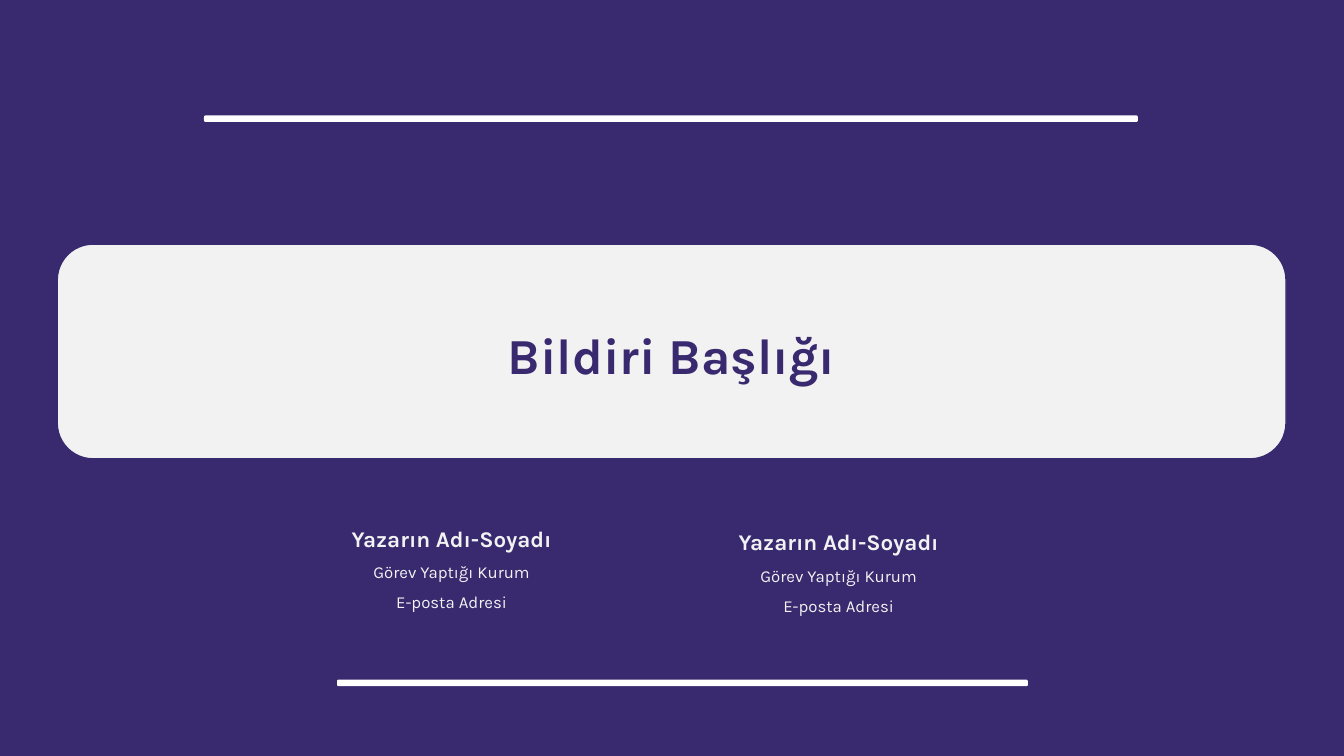
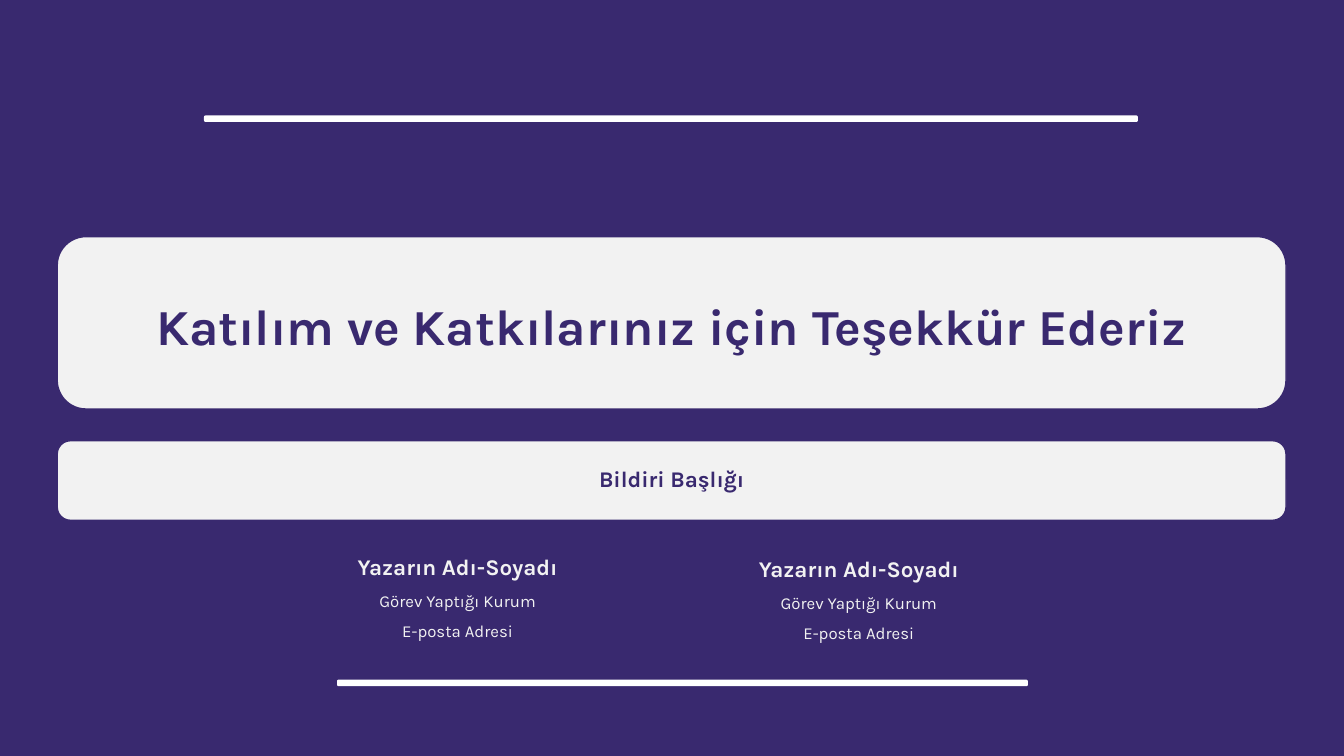
from typing import NamedTuple

import pptx
import pptx.dml.color
import pptx.enum.shapes
import pptx.enum.text
import pptx.util

PURPLE = pptx.dml.color.RGBColor(0x39, 0x29, 0x6F)
PALE = pptx.dml.color.RGBColor(0xF2, 0xF2, 0xF2)
WHITE = pptx.dml.color.RGBColor(0xFF, 0xFF, 0xFF)
FONT = "Karla"
TOP = pptx.enum.text.MSO_ANCHOR.TOP
BOTTOM = pptx.enum.text.MSO_ANCHOR.BOTTOM
RECTANGLE = pptx.enum.shapes.MSO_SHAPE.RECTANGLE
ROUNDED = pptx.enum.shapes.MSO_SHAPE.ROUNDED_RECTANGLE

HEIGHT = pptx.util.Inches(7.5)
WIDTH = HEIGHT * 16 // 9
BAND_X, BAND_W = 4.26, 91.43
AUTHOR_W, AUTHOR_H = 28.05, 14.8


class Box(NamedTuple):
    """Left, top, width and height in percent of the slide's size."""
    x: float
    y: float
    w: float
    h: float

    def emu(self) -> tuple[int, ...]:
        return tuple(round(share * full / 100) for share, full
                     in zip(self, (WIDTH, HEIGHT, WIDTH, HEIGHT)))


class Line(NamedTuple):
    text: str
    size: int
    bold: bool = False


class Band(NamedTuple):
    """A pale panel and the heading that stands in it."""
    y: float
    h: float
    text_y: float
    text_h: float
    heading: Line


class Page(NamedTuple):
    bands: list[Band]
    authors: list[tuple[float, float]]


RULES = [Box(25.13, 90, 51.3, 0.67), Box(15.23, 15.37, 69.38, 0.67)]
AUTHOR = [
    Line("Yazarın Adı-Soyadı", 16, True),
    Line("Görev Yaptığı Kurum", 12),
    Line("E-posta Adresi", 12),
]
PAGES = [
    Page(
        [Band(32.3, 28.4, 37.6, 13.87, Line("Bildiri Başlığı", 36, True))],
        [(19.58, 66.97), (48.38, 67.47)],
    ),
    Page(
        [
            Band(31.3, 22.8, 33.87, 13.87,
                 Line("Katılım ve Katkılarınız için Teşekkür Ederiz", 36, True)),
            Band(58.3, 10.53, 60.8, 4.93, Line("Bildiri Başlığı", 16, True)),
        ],
        [(20.03, 70.8), (49.88, 71.03)],
    ),
]


def add_panel(s, kind, box: Box, fill, line=None):
    sp = s.shapes.add_shape(kind, *box.emu())
    sp.shadow.inherit = False
    sp.fill.solid()
    sp.fill.fore_color.rgb = fill
    if line is None:
        sp.line.fill.background()
    else:
        sp.line.color.rgb = line
        sp.line.width = pptx.util.Pt(1)
    return sp


def write(sp, lines: list[Line], *, color, anchor=TOP,
          spacing: float = 1.0) -> None:
    tf = sp.text_frame
    tf.word_wrap = True
    tf.vertical_anchor = anchor
    for i, line in enumerate(lines):
        p = tf.add_paragraph() if i else tf.paragraphs[0]
        p.alignment = pptx.enum.text.PP_ALIGN.CENTER
        p.line_spacing = spacing
        r = p.add_run()
        r.text = line.text
        r.font.name = FONT
        r.font.size = pptx.util.Pt(line.size)
        r.font.bold = line.bold
        r.font.color.rgb = color


def add_page(prs, page: Page) -> None:
    s = prs.slides.add_slide(prs.slide_layouts[6])
    s.background.fill.solid()
    s.background.fill.fore_color.rgb = PURPLE
    for x, y in page.authors:
        sp = add_panel(s, RECTANGLE, Box(x, y, AUTHOR_W, AUTHOR_H), PURPLE)
        write(sp, AUTHOR, color=PALE, spacing=1.5)
    for rule in RULES:
        add_panel(s, ROUNDED, rule, WHITE, WHITE)
    for band in page.bands:
        add_panel(s, ROUNDED, Box(BAND_X, band.y, BAND_W, band.h),
                  PALE, PURPLE)
        heading_box = Box(BAND_X, band.text_y, BAND_W, band.text_h)
        write(s.shapes.add_textbox(*heading_box.emu()), [band.heading],
              color=PURPLE, anchor=BOTTOM)


def main() -> None:
    prs = pptx.Presentation()
    prs.slide_width, prs.slide_height = WIDTH, HEIGHT
    for page in PAGES:
        add_page(prs, page)
    prs.save("out.pptx")


if __name__ == "__main__":
    main()
